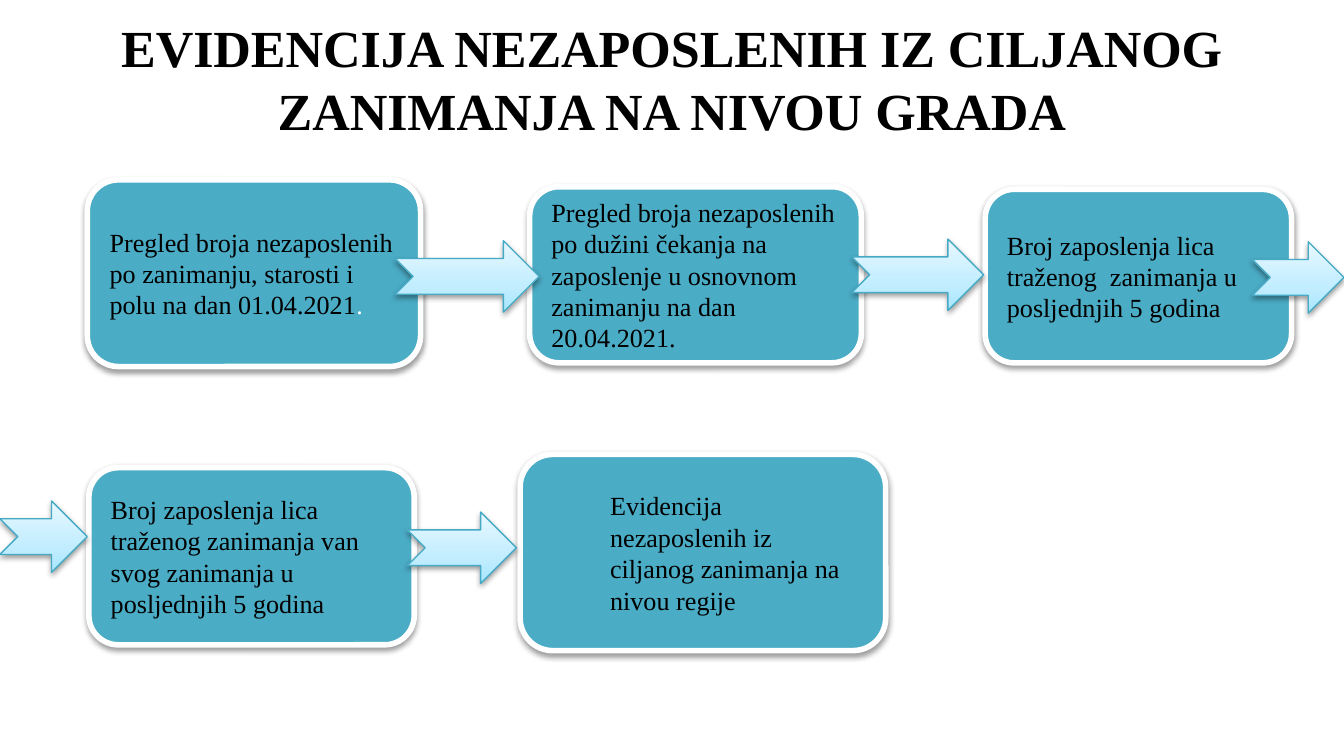
from lxml import etree
from copy import deepcopy
from pptx import Presentation
from pptx.dml.color import RGBColor
from pptx.enum.shapes import MSO_SHAPE
from pptx.enum.text import MSO_ANCHOR, PP_ALIGN
from pptx.oxml.ns import qn
from pptx.util import Cm, Pt

ROUNDED = MSO_SHAPE.ROUNDED_RECTANGLE
ARROW = MSO_SHAPE.NOTCHED_RIGHT_ARROW
MIDDLE = MSO_ANCHOR.MIDDLE
LEFT, CENTER = PP_ALIGN.LEFT, PP_ALIGN.CENTER

COLORS = {
    "text": "000000",
    "step": "4BACC6",
    "white": "FFFFFF",
    "arrow_line": "46AAC5",
    "shadow": "000000",
}
ARROW_STOPS = [(0, "A7E6FF"), (0.35, "C1EDFF"), (1, "E7F8FF")]
TITLE_FONT = {"name": "Times New Roman", "size": Pt(27.9), "bold": True}
STEP_FONT = {"name": "Times New Roman", "size": Pt(14)}
ARROW_HEIGHT = 1.35

TITLE = "EVIDENCIJA NEZAPOSLENIH IZ CILJANOG\vZANIMANJA NA NIVOU GRADA"

# Box in cm, indent in cm, runs of (text, color)
STEPS = [
    ((1.65, 3.4, 6.3, 3.53), 0,
     [("Pregled broja nezaposlenih po zanimanju, starosti i polu na dan 01.04.2021", "text"),
      (".", "white")]),
    ((10.01, 3.53, 6.27, 3.33), 0,
     [("Pregled broja nezaposlenih po dužini čekanja na zaposlenje u osnovnom "
       "zanimanju na dan 20.04.2021.", "text")]),
    ((18.62, 3.58, 5.79, 3.28), 0,
     [("Broj zaposlenja lica traženog  zanimanja u posljednjih 5 godina", "text")]),
    ((1.68, 8.84, 6.15, 3.35), 0,
     [("Broj zaposlenja lica traženog zanimanja van svog zanimanja u "
       "posljednjih 5 godina", "text")]),
    ((9.83, 8.59, 6.91, 3.71), 1.27,
     [("Evidencija nezaposlenih iz ciljanog zanimanja na nivou regije", "text")]),
]
# Left, top, width in cm
ARROWS = [
    (7.47, 4.55, 2.72),
    (16.1, 4.52, 2.49),
    (23.67, 4.57, 1.73),
    (0, 9.47, 1.65),
    (7.7, 9.68, 2.06),
]


def rgb(name):
    return RGBColor.from_string(COLORS[name])


def format_font(font, values, color):
    for attribute, value in values.items():
        setattr(font, attribute, value)
    font.color.rgb = rgb(color)


def set_line(shape, color, width):
    shape.line.color.rgb = rgb(color)
    shape.line.width = Pt(width)


def add_shadow(shape):
    """Replace the theme shadow with a soft one falling straight down."""
    shape.shadow.inherit = False
    effects = shape._element.spPr.find(qn("a:effectLst"))
    shadow = etree.SubElement(effects, qn("a:outerShdw"), blurRad=str(Pt(3.1)),
                              dist=str(Pt(1.6)), dir="5400000", rotWithShape="0")
    color = etree.SubElement(shadow, qn("a:srgbClr"), val=COLORS["shadow"])
    etree.SubElement(color, qn("a:alpha"), val="38000")


def fill_gradient(fill):
    """Fill from bottom to top through all the arrow stops."""
    fill.gradient()
    fill.gradient_angle = 90
    first = fill.gradient_stops[0]._gs
    first.addnext(deepcopy(first))
    for stop, (position, color) in zip(fill.gradient_stops, ARROW_STOPS):
        stop.position = position
        stop.color.rgb = RGBColor.from_string(color)


def add_title(slide, box):
    title = slide.shapes.title
    title.left, title.top, title.width, title.height = map(Cm, box)
    frame = title.text_frame
    frame.text = TITLE
    frame.word_wrap = True
    frame.vertical_anchor = MIDDLE
    heading = frame.paragraphs[0]
    heading.alignment = CENTER
    heading.line_spacing = Pt(33.7)
    for run in heading.runs:
        format_font(run.font, TITLE_FONT, "text")


def add_step(slide, box, indent, runs):
    step = slide.shapes.add_shape(ROUNDED, *map(Cm, box))
    step.fill.solid()
    step.fill.fore_color.rgb = rgb("step")
    set_line(step, "white", 3)
    add_shadow(step)
    frame = step.text_frame
    frame.word_wrap = True
    frame.vertical_anchor = MIDDLE
    description = frame.paragraphs[0]
    description.alignment = LEFT
    if indent:
        description.level = 1
        description._p.get_or_add_pPr().set("marL", str(Cm(indent)))
    for text, color in runs:
        run = description.add_run()
        run.text = text
        format_font(run.font, STEP_FONT, color)


def add_arrow(slide, box):
    arrow = slide.shapes.add_shape(ARROW, *map(Cm, box))
    fill_gradient(arrow.fill)
    set_line(arrow, "arrow_line", 0.75)
    add_shadow(arrow)


def main():
    presentation = Presentation()
    presentation.slide_width, presentation.slide_height = Cm(25.4), Cm(14.29)
    slide = presentation.slides.add_slide(presentation.slide_layouts[5])
    add_title(slide, (1.27, 0, 22.86, 2.95))
    for box, indent, runs in STEPS:
        add_step(slide, box, indent, runs)
    for left, top, width in ARROWS:
        add_arrow(slide, (left, top, width, ARROW_HEIGHT))
    presentation.save("out.pptx")


if __name__ == "__main__":
    main()
